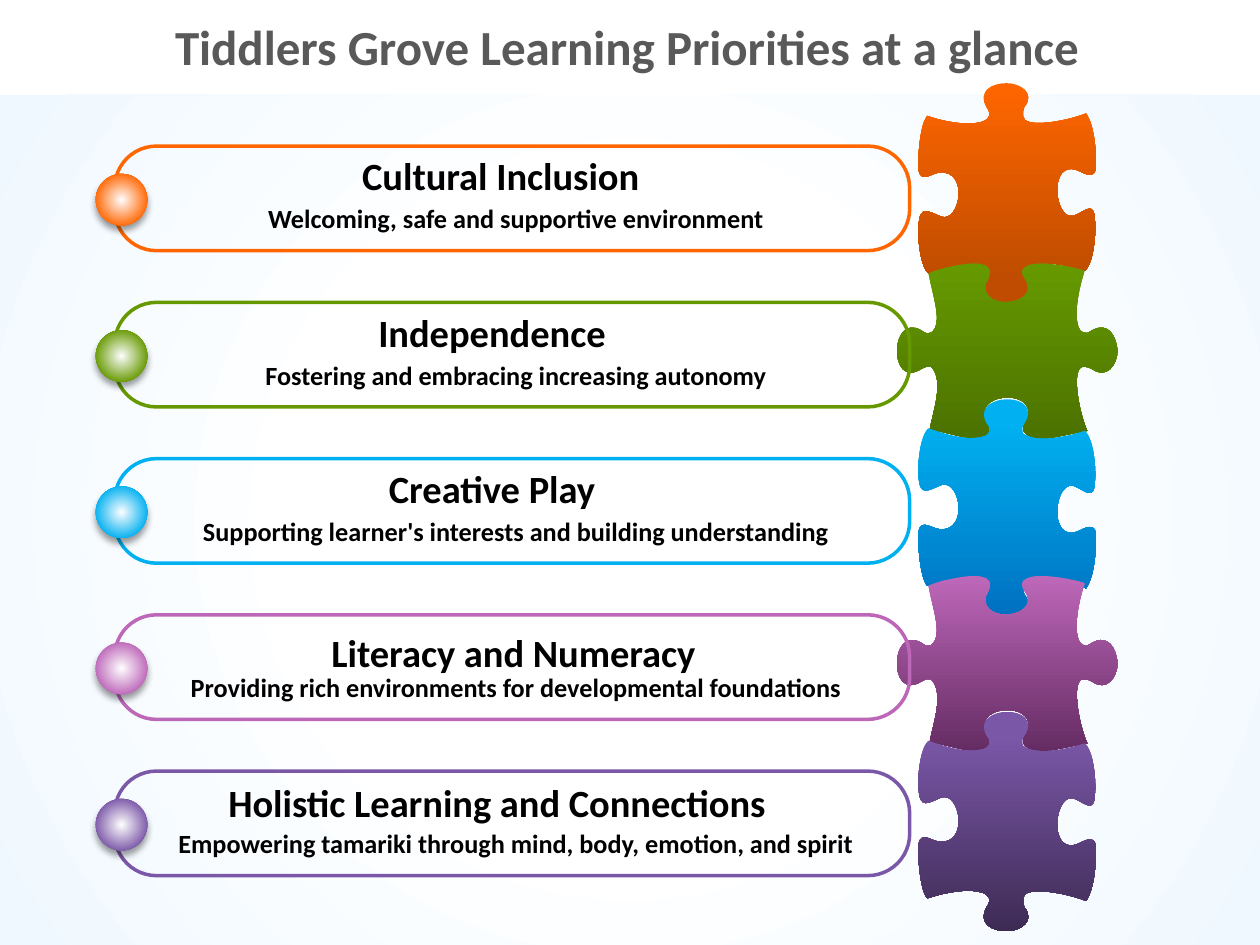
from lxml import etree
from pptx import Presentation
from pptx.dml.color import RGBColor as Rgb
from pptx.enum.shapes import MSO_SHAPE as Kind
from pptx.enum.text import MSO_ANCHOR as Anchor, PP_ALIGN as Align
from pptx.oxml.ns import qn
from pptx.util import Inches, Pt

FONT = "Calibri"
COLORS = {
    "white": "FFFFFF", "sky": "EFF8FF", "black": "000000", "gray": "595959",
    "orange": "FF6600", "rust": "BF4C00", "green": "669900", "moss": "4C7200",
    "blue": "00B0F0", "navy": "0070C0", "pink": "BD67B9", "plum": "652C63",
    "violet": "7B57A8", "ink": "3D2B54",
}
# color, heading, its left, width and drop in the card, caption
CARDS = [
    ("orange", "Cultural Inclusion", 2.69, 2.57, 0,
     "Welcoming, safe and supportive environment"),
    ("green", "Independence", 2.76, 2.29, 0,
     "Fostering and embracing increasing autonomy"),
    ("blue", "Creative Play", 2.76, 2.29, 0,
     "Supporting learner's interests and building understanding"),
    ("pink", "Literacy and Numeracy", 2.23, 3.69, 0.06,
     "Providing rich environments for developmental foundations"),
    ("violet", "Holistic Learning and Connections", 1.28, 5.33, 0.01,
     "Empowering tamariki through mind, body, emotion, and spirit"),
]
PITCH = 1.24
# Cubic curves in inches: two control points and an end point each.
# Each outline starts at the end of its last curve.
TALL = [
    (0.81, 0, 0.93, 0.08, 0.84, 0.19), (0.83, 0.21, 0.83, 0.23, 0.83, 0.26),
    (0.83, 0.36, 1.15, 0.31, 1.33, 0.24), (1.4, 0.34, 1.41, 0.56, 1.41, 0.65),
    (1.41, 0.73, 1.37, 0.75, 1.28, 0.7), (1.01, 0.57, 1.08, 1.16, 1.26, 1.04),
    (1.31, 1.02, 1.4, 0.93, 1.4, 1.09), (1.41, 1.14, 1.4, 1.42, 1.32, 1.49),
    (1.23, 1.46, 0.95, 1.38, 0.83, 1.47), (0.82, 1.49, 0.82, 1.52, 0.84, 1.55),
    (1.01, 1.81, 0.4, 1.8, 0.54, 1.55), (0.58, 1.51, 0.57, 1.45, 0.49, 1.44),
    (0.41, 1.42, 0.27, 1.44, 0.08, 1.51), (0.01, 1.46, -0.01, 1.2, 0, 1.13),
    (0.01, 0.96, 0.08, 1.02, 0.18, 1.06), (0.33, 1.11, 0.4, 0.69, 0.17, 0.71),
    (0.11, 0.71, 0.02, 0.8, 0, 0.69), (-0.01, 0.62, 0.01, 0.32, 0.07, 0.26),
    (0.34, 0.35, 0.54, 0.33, 0.56, 0.26), (0.57, 0.25, 0.56, 0.22, 0.54, 0.19),
    (0.47, 0.06, 0.58, 0, 0.7, 0),
]
WIDE = [
    (1.75, 0.81, 1.66, 0.92, 1.55, 0.84), (1.53, 0.83, 1.51, 0.82, 1.48, 0.82),
    (1.38, 0.82, 1.44, 1.17, 1.51, 1.33), (1.42, 1.34, 1.21, 1.4, 1.11, 1.39),
    (1.05, 1.38, 0.96, 1.34, 1.02, 1.26), (1.16, 1, 0.62, 1.01, 0.7, 1.23),
    (0.74, 1.31, 0.79, 1.35, 0.64, 1.39), (0.57, 1.4, 0.35, 1.33, 0.26, 1.32),
    (0.28, 1.19, 0.38, 0.93, 0.27, 0.82), (0.25, 0.81, 0.23, 0.82, 0.19, 0.84),
    (-0.07, 1, -0.06, 0.39, 0.19, 0.53), (0.23, 0.56, 0.25, 0.56, 0.27, 0.55),
    (0.37, 0.48, 0.28, 0.25, 0.25, 0.08), (0.33, 0.04, 0.52, 0, 0.62, 0),
    (0.79, 0.01, 0.74, 0.1, 0.7, 0.17), (0.68, 0.38, 1.11, 0.33, 1.03, 0.15),
    (1, 0.1, 0.95, 0.04, 1.06, 0.01), (1.16, -0.02, 1.42, 0.03, 1.49, 0.06),
    (1.4, 0.33, 1.41, 0.53, 1.48, 0.55), (1.5, 0.56, 1.52, 0.55, 1.55, 0.53),
    (1.68, 0.46, 1.74, 0.58, 1.75, 0.69),
]


def hue(name):
    return Rgb.from_string(COLORS[name])


def add(node, tag, **attrs):
    return etree.SubElement(node, qn(tag), {k: str(v) for k, v in attrs.items()})


def blend(shape, stops, radial=False):
    """Fill with a gradient, from the top down or from the centre out."""
    shape.fill.gradient()
    grad = shape.element.spPr.find(qn("a:gradFill"))
    for child in list(grad):
        grad.remove(child)
    row = add(grad, "a:gsLst")
    for pos, name in stops:
        add(add(row, "a:gs", pos=pos * 1000), "a:srgbClr", val=COLORS[name])
    if radial:
        mid = add(grad, "a:path", path="circle")
        add(mid, "a:fillToRect", l=50000, t=50000, r=50000, b=50000)
    else:
        add(grad, "a:lin", ang=5400000, scaled=0)
    shape.line.fill.background()
    shape.shadow.inherit = False


def drop_shade(shape):
    glow = add(shape.element.spPr.find(qn("a:effectLst")), "a:outerShdw",
               blurRad=Pt(4), dist=Pt(3), dir=5400000, rotWithShape=0)
    add(add(glow, "a:srgbClr", val=COLORS["black"]), "a:alpha", val=40000)


def write(frame, text, size, color):
    frame.word_wrap = True
    frame.vertical_anchor = Anchor.TOP
    para = frame.paragraphs[0]
    para.alignment = Align.CENTER
    run = para.add_run()
    run.text = text
    font = run.font
    font.name, font.size, font.bold = FONT, Pt(size), True
    font.color.rgb = hue(color)


def add_title(slide, x, y, w, h):
    title = slide.shapes.title
    title.left, title.top, title.width, title.height = map(Inches, (x, y, w, h))
    write(title.text_frame, "Tiddlers Grove Learning Priorities at a glance",
          28, "gray")


def add_piece(shapes, x, y, curves, stops, flip=False):
    """Draw the closed cubic outline; flip mirrors it top to bottom."""
    def place(px, py):
        return Inches(x + px), Inches(y + (1.75 - py if flip else py))

    ends = [place(*curve[4:]) for curve in curves]
    pen = shapes.build_freeform(*ends[-1])
    pen.add_line_segments(ends, close=False)
    piece = pen.convert_to_shape()
    track = piece.element.spPr.find(".//" + qn("a:path"))
    for line in track.findall(qn("a:lnTo")):
        track.remove(line)
    for curve in curves:
        bend = add(track, "a:cubicBezTo")
        for i in (0, 2, 4):
            px, py = place(*curve[i:i + 2])
            add(bend, "a:pt", x=px - piece.left, y=py - piece.top)
    add(track, "a:close")
    blend(piece, stops)


def add_puzzle(slide, x, y):
    """Stack five pieces, tall and wide by turns, around one axis."""
    shapes = slide.shapes.add_group_shape().shapes
    darks = ["rust", "moss", "navy", "plum", "ink"]
    for i, (card, dark) in enumerate(zip(CARDS, darks)):
        stops = [(0, card[0]), (100, dark)]
        if i % 2:
            add_piece(shapes, x - 0.17, y + 0.19 + i * PITCH, WIDE, stops)
        else:
            top = y + i * PITCH + (0.02 if i else 0)
            add_piece(shapes, x, top, TALL, stops, flip=i > 0)


def add_card(slide, x, y, w, h, card):
    color, head, left, wide, drop, note = card
    shapes = slide.shapes.add_group_shape().shapes
    box = shapes.add_textbox(Inches(left), Inches(y + drop),
                             Inches(wide), Inches(0.47))
    write(box.text_frame, head, 22, "black")
    frame = shapes.add_shape(Kind.ROUNDED_RECTANGLE, Inches(x), Inches(y),
                             Inches(w), Inches(h))
    frame.adjustments[0] = 0.4
    frame.fill.background()
    frame.line.color.rgb = hue(color)
    frame.line.width = Pt(2)
    frame.shadow.inherit = False
    ball = shapes.add_shape(Kind.OVAL, Inches(x - 0.15), Inches(y + 0.22),
                            Inches(0.41), Inches(0.41))
    blend(ball, [(0, "white"), (75, color), (100, color)], radial=True)
    drop_shade(ball)
    box = shapes.add_textbox(Inches(x + 0.28), Inches(y + 0.4),
                             Inches(w - 0.5), Inches(0.35))
    write(box.text_frame, note, 15, "black")


def main():
    deck = Presentation()
    deck.slide_width, deck.slide_height = Inches(10), Inches(7.5)
    slide = deck.slides.add_slide(deck.slide_layouts[5])
    add_title(slide, 1.14, 0.08, 7.67, 0.57)
    back = slide.shapes.add_shape(Kind.RECTANGLE, 0, Inches(0.75),
                                  Inches(10), Inches(6.75))
    blend(back, [(0, "white"), (43, "white"), (100, "sky")], radial=True)
    add_puzzle(slide, 7.29, 0.66)
    for i, card in enumerate(CARDS):
        add_card(slide, 0.91, 1.16 + i * PITCH, 6.31, 0.83, card)
    deck.save("out.pptx")


if __name__ == "__main__":
    main()
